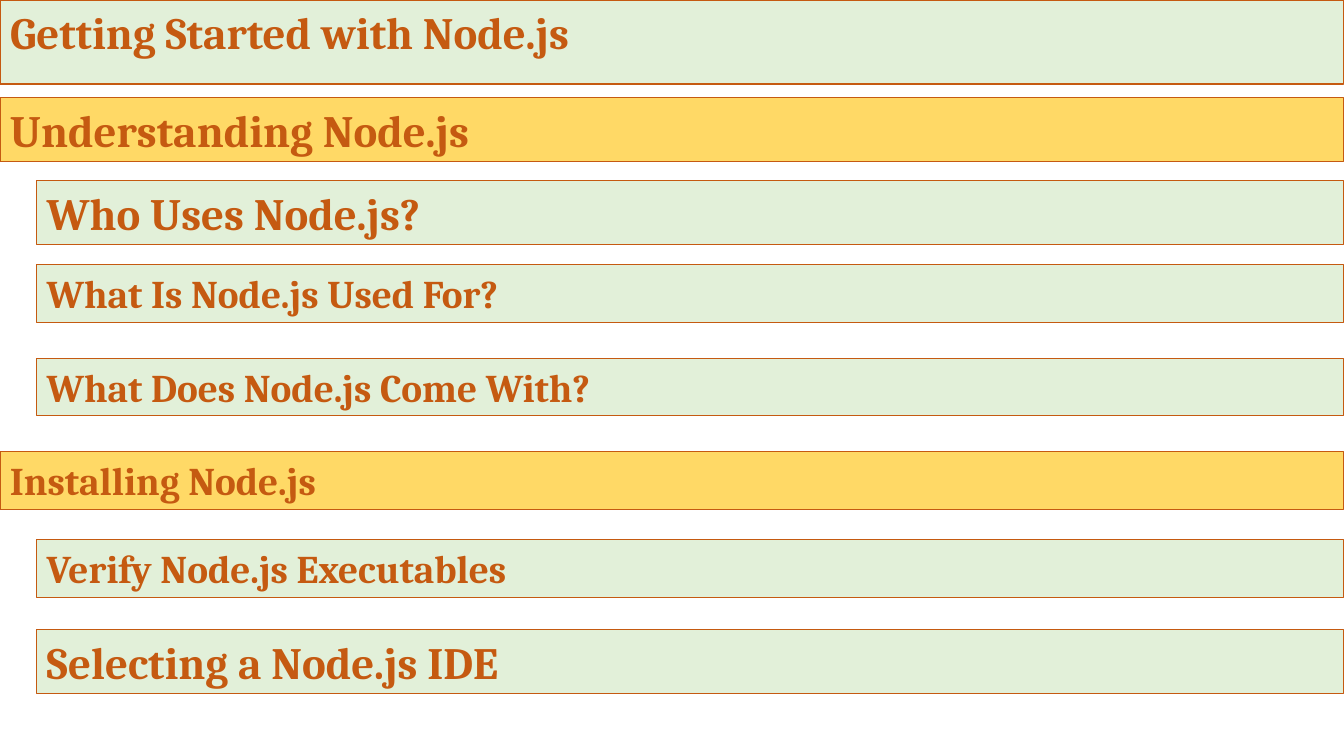
from pptx import Presentation
from pptx import util as u
from pptx.dml.color import RGBColor
from pptx.enum import shapes, text

PX = 9525  # EMU in one px
WIDTH, HEIGHT = 1280, 720
INDENT = 35

GREEN = RGBColor(0xE2, 0xF0, 0xD9)
GOLD = RGBColor(0xFF, 0xD9, 0x66)
RUST = RGBColor(0xC5, 0x5A, 0x11)

LARGE, MEDIUM = 32, 28  # text sizes in points
BAR_HEIGHTS = {LARGE: 61, MEDIUM: 55}


class Outline:
    """Draws full-width heading bars on one slide."""

    font_name = "Cambria"

    def __init__(self, presentation):
        layout = presentation.slide_layouts.get_by_name("Title Only")
        self.slide = presentation.slides.add_slide(layout)

    def title(self, words, size):
        shape = self.slide.shapes.title
        shape.left, shape.top = 0, 0
        shape.width, shape.height = WIDTH * PX, BAR_HEIGHTS[size] * PX
        self.style(shape, words, size, GREEN)

    def bar(self, words, top, size, left, fill):
        shape = self.slide.shapes.add_shape(
            shapes.MSO_SHAPE.RECTANGLE, left * PX, top * PX,
            (WIDTH - left) * PX, BAR_HEIGHTS[size] * PX)
        shape.shadow.inherit = False
        self.style(shape, words, size, fill)

    def section(self, words, top, size):
        self.bar(words, top, size, 0, GOLD)

    def topic(self, words, top, size):
        self.bar(words, top, size, INDENT, GREEN)

    def style(self, shape, words, size, fill):
        shape.fill.solid()
        shape.fill.fore_color.rgb = fill
        shape.line.color.rgb = RUST
        shape.line.width = u.Pt(0.75)

        frame = shape.text_frame
        frame.text = words
        frame.word_wrap = True
        frame.auto_size = text.MSO_AUTO_SIZE.SHAPE_TO_FIT_TEXT
        frame.vertical_anchor = text.MSO_ANCHOR.TOP

        paragraph = frame.paragraphs[0]
        paragraph.alignment = text.PP_ALIGN.LEFT
        paragraph.font.name = self.font_name
        paragraph.font.size = u.Pt(size)
        paragraph.font.bold = True
        paragraph.font.color.rgb = RUST


def main():
    presentation = Presentation()
    presentation.slide_width = WIDTH * PX
    presentation.slide_height = HEIGHT * PX
    outline = Outline(presentation)

    # Chapter title
    outline.title("Getting Started with Node.js", LARGE)

    # First section and its topics
    outline.section("Understanding Node.js", 93, LARGE)
    outline.topic("Who Uses Node.js?", 172, LARGE)
    outline.topic("What Is Node.js Used For?", 252, MEDIUM)
    outline.topic("What Does Node.js Come With?", 341, MEDIUM)

    # Second section and its topics
    outline.section("Installing Node.js", 430, MEDIUM)
    outline.topic("Verify Node.js Executables", 514, MEDIUM)
    outline.topic("Selecting a Node.js IDE", 600, LARGE)

    presentation.save("out.pptx")


if __name__ == "__main__":
    main()
